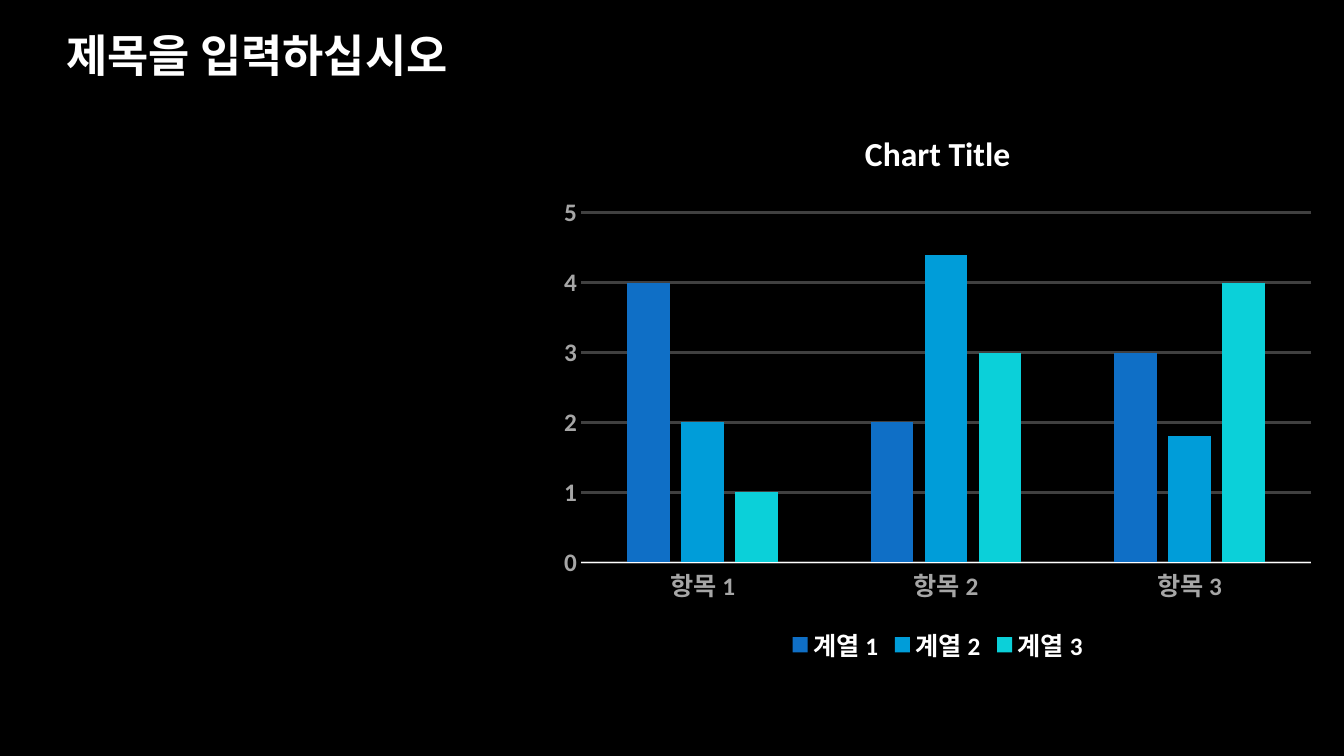
from pptx import Presentation
from pptx.chart.data import CategoryChartData
from pptx.dml.color import RGBColor
from pptx.enum.chart import XL_CHART_TYPE, XL_LEGEND_POSITION, XL_TICK_MARK
from pptx.enum.text import MSO_ANCHOR
from pptx.util import Inches, Pt

TITLE = "제목을 입력하십시오"
CHART_TITLE = "Chart Title"
CATEGORIES = ["항목 1", "항목 2", "항목 3"]
SERIES = [
    ("계열 1", (4, 2, 3), "0F6FC6"),
    ("계열 2", (2, 4.4, 1.8), "009DD9"),
    ("계열 3", (1, 3, 4), "0BD0D9"),
]
TITLE_BOX = (0.56, 0.22, 12.21, 0.71)
CHART_BOX = (5.44, 1.08, 7.72, 5.55)
THEME = {
    "font": "Calibri",
    "background": "000000",
    "text": "FFFFFF",
    "muted": "A6A6A6",
    "grid": "404040",
    "title_size": 32,
    "chart_title_size": 24,
    "label_size": 18,
}


def color(name):
    return RGBColor.from_string(THEME[name])


def style_font(font, size, color_name):
    font.name = THEME["font"]
    font.size = Pt(THEME[size])
    font.bold = True
    font.color.rgb = color(color_name)


def add_run(paragraph, text, size):
    run = paragraph.add_run()
    run.text = text
    style_font(run.font, size, "text")


def add_title(slide):
    frame = slide.shapes.add_textbox(*map(Inches, TITLE_BOX)).text_frame
    frame.word_wrap = True
    frame.vertical_anchor = MSO_ANCHOR.MIDDLE
    paragraph = frame.paragraphs[0]
    paragraph.line_spacing = 0.9
    add_run(paragraph, TITLE, "title_size")


def style_axes(chart):
    for axis in (chart.category_axis, chart.value_axis):
        axis.major_tick_mark = XL_TICK_MARK.NONE
        axis.minor_tick_mark = XL_TICK_MARK.NONE
        style_font(axis.tick_labels.font, "label_size", "muted")
    category_line = chart.category_axis.format.line
    category_line.color.rgb = color("text")
    category_line.width = Pt(0.75)

    value_axis = chart.value_axis
    value_axis.minimum_scale = 0
    value_axis.maximum_scale = 5
    value_axis.major_unit = 1
    value_axis.format.line.fill.background()
    value_axis.has_major_gridlines = True
    grid_line = value_axis.major_gridlines.format.line
    grid_line.color.rgb = color("grid")
    grid_line.width = Pt(2.25)


def add_column_chart(slide):
    data = CategoryChartData()
    data.categories = CATEGORIES
    for name, values, _ in SERIES:
        data.add_series(name, values)
    chart = slide.shapes.add_chart(
        XL_CHART_TYPE.COLUMN_CLUSTERED, *map(Inches, CHART_BOX), data
    ).chart
    style_font(chart.font, "label_size", "muted")

    chart.has_title = True
    paragraph = chart.chart_title.text_frame.paragraphs[0]
    add_run(paragraph, CHART_TITLE, "chart_title_size")
    chart.chart_title.include_in_layout = False

    chart.has_legend = True
    chart.legend.position = XL_LEGEND_POSITION.BOTTOM
    chart.legend.include_in_layout = False
    style_font(chart.legend.font, "label_size", "text")

    style_axes(chart)
    plot = chart.plots[0]
    plot.vary_by_categories = False
    plot.gap_width = 219
    plot.overlap = -27
    for series, (_, _, fill_color) in zip(plot.series, SERIES):
        series.format.fill.solid()
        series.format.fill.fore_color.rgb = RGBColor.from_string(fill_color)


def main():
    presentation = Presentation()
    presentation.slide_width = Inches(13.33)
    presentation.slide_height = Inches(7.5)
    slide = presentation.slides.add_slide(presentation.slide_layouts[6])
    slide.background.fill.solid()
    slide.background.fill.fore_color.rgb = color("background")
    add_column_chart(slide)
    add_title(slide)
    presentation.save("out.pptx")


if __name__ == "__main__":
    main()
